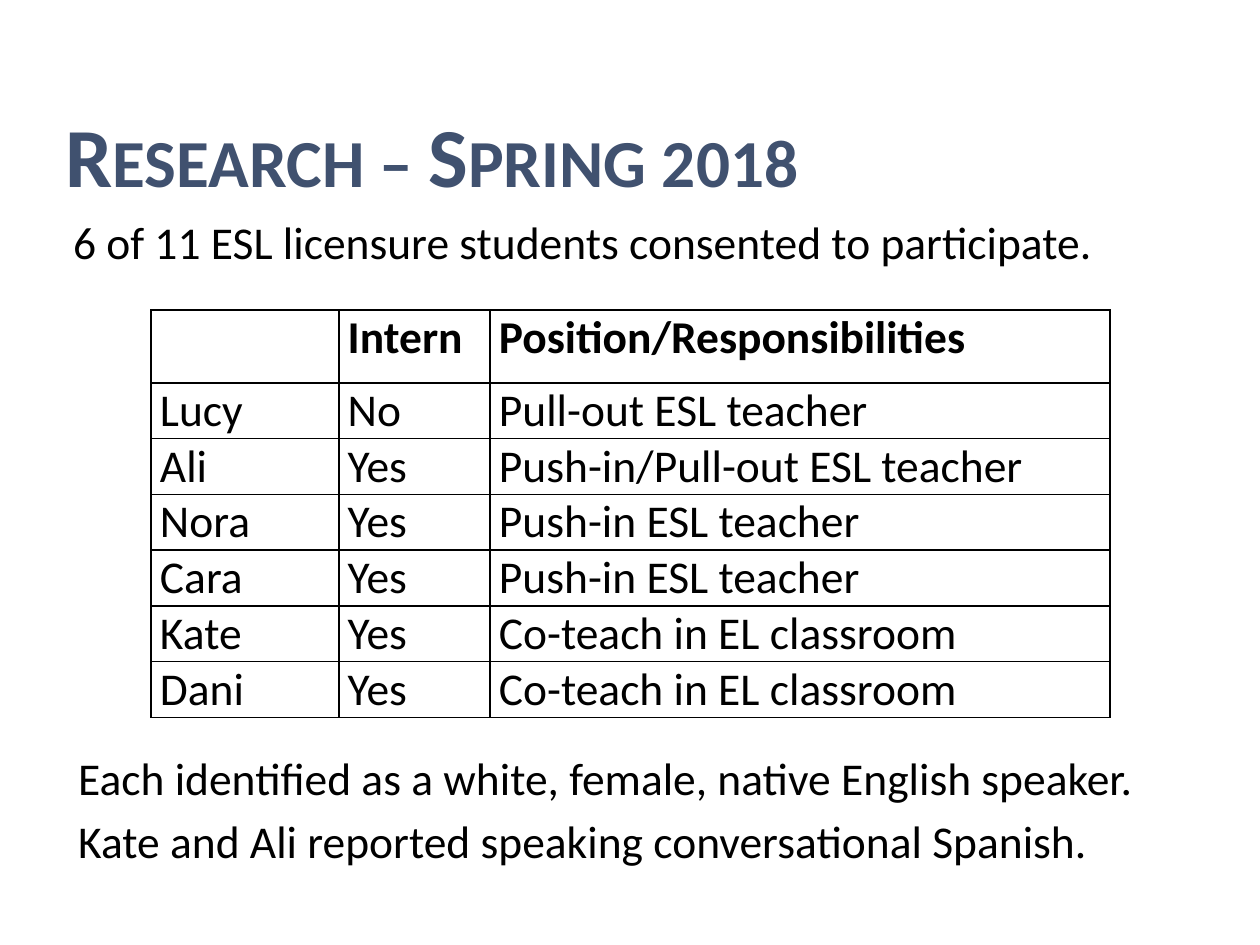
from lxml.etree import SubElement
from pptx import Presentation
from pptx.dml.color import RGBColor
from pptx.enum.text import MSO_ANCHOR, MSO_AUTO_SIZE, PP_ALIGN
from pptx.oxml.ns import qn
from pptx.util import Inches, Pt

COLORS = {"title": "40516F", "text": "000000", "border": "000000"}
FONT = "Calibri"
TEXT_SIZE = 26

COLUMN_WIDTHS = [1.49, 1.2, 4.92]
HEADER_HEIGHT, ROW_HEIGHT = 0.58, 0.43
PARTICIPANTS = [
    ("", "Intern", "Position/Responsibilities"),
    ("Lucy", "No", "Pull-out ESL teacher"),
    ("Ali", "Yes", "Push-in/Pull-out ESL teacher"),
    ("Nora", "Yes", "Push-in ESL teacher"),
    ("Cara", "Yes", "Push-in ESL teacher"),
    ("Kate", "Yes", "Co-teach in EL classroom"),
    ("Dani", "Yes", "Co-teach in EL classroom"),
]


def format_runs(para, size, color, bold=False):
    for span in para.runs:
        span.font.name = FONT
        span.font.size = Pt(size)
        span.font.bold = bold
        span.font.color.rgb = RGBColor.from_string(COLORS[color])


def fill_placeholder(box, text, left, top, width, height, anchor):
    """Place a placeholder, set its text and return its paragraph."""
    box.left, box.top = Inches(left), Inches(top)
    box.width, box.height = Inches(width), Inches(height)
    frame = box.text_frame
    frame.text = text
    frame.word_wrap = True
    frame.auto_size = MSO_AUTO_SIZE.NONE
    frame.vertical_anchor = anchor
    frame.margin_left = frame.margin_right = Inches(0.1)
    frame.margin_top = frame.margin_bottom = Inches(0.1)
    para = frame.paragraphs[0]
    para.alignment = PP_ALIGN.LEFT
    return para


def add_title(box, text):
    para = fill_placeholder(box, text, 0.42, 0.47, 9.16, 1.25, MSO_ANCHOR.BOTTOM)
    format_runs(para, 48, "title", bold=True)
    for span in para.runs:
        span.font._element.set("cap", "small")


def add_statement(box, text, left, top):
    para = fill_placeholder(box, text, left, top, 8.79, 1.76, MSO_ANCHOR.TOP)
    para.line_spacing = 1.15
    para.space_before = Pt(4.8)
    format_runs(para, TEXT_SIZE, "text")
    # Plain paragraph without bullet or hanging indent
    properties = para._p.get_or_add_pPr()
    properties.set("marL", "0")
    properties.set("indent", "0")
    SubElement(properties, qn("a:buNone"))


def add_borders(cell):
    properties = cell._tc.get_or_add_tcPr()
    for side in ("lnL", "lnR", "lnT", "lnB"):
        line = SubElement(properties, qn(f"a:{side}"), w=str(Pt(1)))
        fill = SubElement(line, qn("a:solidFill"))
        SubElement(fill, qn("a:srgbClr"), val=COLORS["border"])


def format_cell(cell, text, bold):
    add_borders(cell)
    cell.fill.background()
    cell.margin_left = cell.margin_right = Inches(0.07)
    cell.margin_top = cell.margin_bottom = 0
    if text:
        cell.text_frame.text = text
        para = cell.text_frame.paragraphs[0]
        para.space_after = Pt(3)
        format_runs(para, TEXT_SIZE, "text", bold)


def add_participant_table(page):
    heights = [HEADER_HEIGHT] + [ROW_HEIGHT] * (len(PARTICIPANTS) - 1)
    table = page.shapes.add_table(
        len(heights), len(COLUMN_WIDTHS), Inches(1.2), Inches(2.46),
        Inches(sum(COLUMN_WIDTHS)), Inches(sum(heights))).table
    table.horz_banding = False
    table.first_row = False
    for column, width in zip(table.columns, COLUMN_WIDTHS):
        column.width = Inches(width)
    for index, (row, height) in enumerate(zip(table.rows, heights)):
        row.height = Inches(height)
        for cell, text in zip(row.cells, PARTICIPANTS[index]):
            format_cell(cell, text, bold=index == 0)


def main():
    deck = Presentation()
    deck.slide_width, deck.slide_height = Inches(10), Inches(7.5)
    # Layout with a title and two bodies
    page = deck.slides.add_slide(deck.slide_layouts[3])
    title, intro, closing = page.placeholders

    add_title(title, "Research – Spring 2018")
    add_statement(
        intro, "6 of 11 ESL licensure students consented to participate.", 0.48, 1.53)
    add_statement(
        closing,
        "Each identified as a white, female, native English speaker. "
        "Kate and Ali reported speaking conversational Spanish.", 0.52, 5.79)
    add_participant_table(page)

    deck.save("out.pptx")


if __name__ == "__main__":
    main()
